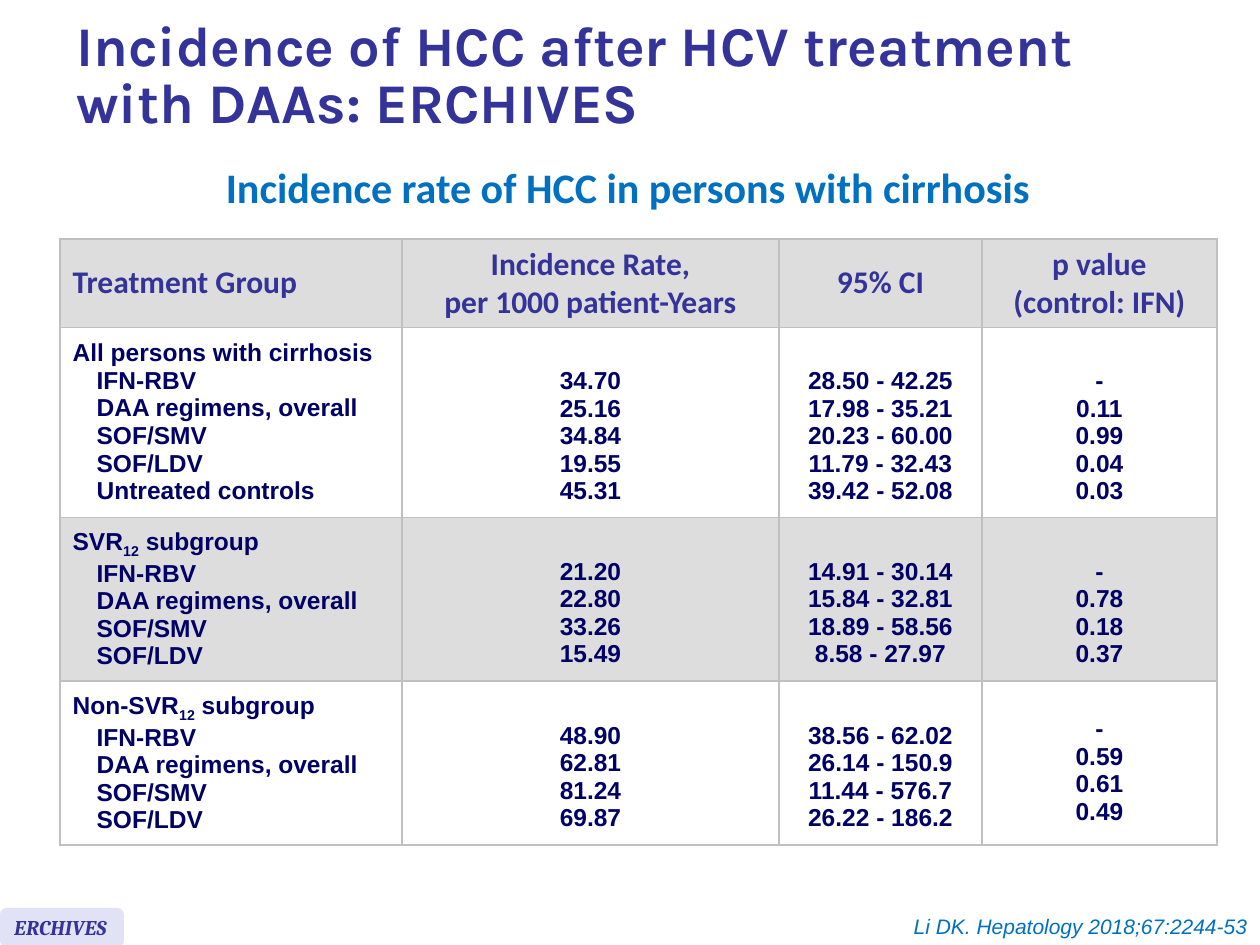
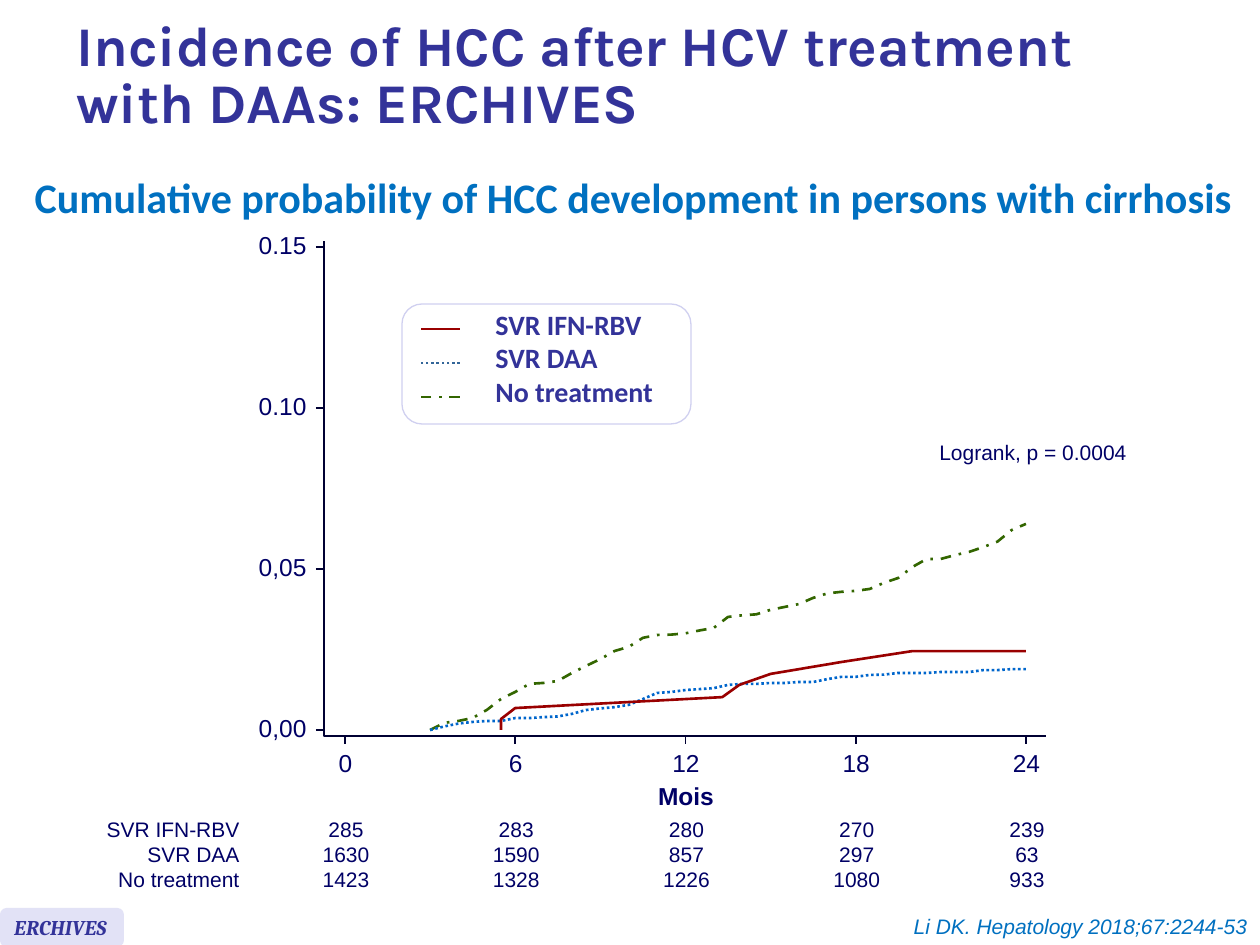
from collections import namedtuple

from lxml.etree import SubElement
from pptx import Presentation
from pptx.dml.color import RGBColor
from pptx.enum.dml import MSO_LINE_DASH_STYLE as Dash
from pptx.enum.shapes import MSO_CONNECTOR as Connector, MSO_SHAPE as Shape
from pptx.enum.text import MSO_ANCHOR as Anchor, PP_ALIGN as Align
from pptx.oxml.ns import qn
from pptx.util import Emu, Pt

SCALE = 914400 / 126
INDIGO, NAVY, BLUE, AXIS = "333399", "000066", "0070C0", "000033"
LAVENDER, LEGEND_EDGE = "E2E2F6", "D0D0F0"
WHITE, GREY, BORDER = "FFFFFF", "DDDDDD", "C0C0C0"
RED, DAA_BLUE, DAA_SAMPLE, GREEN = "990000", "0066CC", "336699", "336600"

TITLE = "Incidence of HCC after HCV treatment with DAAs: ERCHIVES"
CITATION = "Li DK. Hepatology 2018;67:2244-53"

Group = namedtuple("Group", "heading rows")
HEADERS = ["Treatment Group", "Incidence Rate,\nper 1000 patient-Years",
           "95% CI", "p value\n(control: IFN)"]
GROUPS = [
    Group("All persons with cirrhosis", [
        ("IFN-RBV", "34.70", "28.50 - 42.25", "-"),
        ("DAA regimens, overall", "25.16", "17.98 - 35.21", "0.11"),
        ("SOF/SMV", "34.84", "20.23 - 60.00", "0.99"),
        ("SOF/LDV", "19.55", "11.79 - 32.43", "0.04"),
        ("Untreated controls", "45.31", "39.42 - 52.08", "0.03")]),
    Group("SVR_12_ subgroup", [
        ("IFN-RBV", "21.20", "14.91 - 30.14", "-"),
        ("DAA regimens, overall", "22.80", "15.84 - 32.81", "0.78"),
        ("SOF/SMV", "33.26", "18.89 - 58.56", "0.18"),
        ("SOF/LDV", "15.49", "8.58 - 27.97", "0.37")]),
    Group("Non-SVR_12_ subgroup", [
        ("IFN-RBV", "48.90", "38.56 - 62.02", "-"),
        ("DAA regimens, overall", "62.81", "26.14 - 150.9", "0.59"),
        ("SOF/SMV", "81.24", "11.44 - 576.7", "0.61"),
        ("SOF/LDV", "69.87", "26.22 - 186.2", "0.49")]),
]
COLUMN_WIDTHS = [342, 377, 203, 235]
ROW_HEIGHTS = [88, 190, 164, 164]
CELL_MARGIN, HEADING_HEIGHT, REGIMEN_INDENT = 6, 28, 24

MONTHS = [0, 6, 12, 18, 24]
CASES_PER_1000 = {0: "0,00", 50: "0,05", 100: "0.10", 150: "0.15"}
ORIGIN_X, ORIGIN_Y = 25, 490
PX_PER_MONTH, PX_PER_CASE = 681 / 24, 161 / 50
AXIS_LEFT, AXIS_BOTTOM, AXIS_RIGHT, AXIS_TOP = 4, 496, 726, 1
TICK = 8
AT_RISK_TOP, LEGEND_PITCH = 570, 34


def half_monthly(cases, start=3):
    return [(start + index / 2, value) for index, value in enumerate(cases)]


Arm = namedtuple("Arm", "name stroke sample dash at_risk curve")
ARMS = [
    Arm("SVR IFN-RBV", RED, RED, None, [285, 283, 280, 270, 239],
        [(5.5, 0), (5.5, 3.4), (6, 6.8), (13.3, 10.2), (13.9, 14), (15, 17.4),
         (17.5, 21.1), (20, 24.5), (24, 24.5)]),
    Arm("SVR DAA", DAA_BLUE, DAA_SAMPLE, Dash.ROUND_DOT, [1630, 1590, 857, 297, 63],
        half_monthly([
            0, 1.1, 2, 2.5, 2.8, 2.8, 3.7, 3.7, 4, 4.2, 5, 6.2, 6.7, 7.1, 7.8,
            9.6, 11.5, 11.8, 12.4, 12.7, 13, 14, 14.3, 14.3, 14.6, 14.6, 14.9, 14.9,
            15.8, 16.5, 16.5, 17.1, 17.2, 17.7, 17.7, 17.7, 18, 18, 18, 18.6, 18.6,
            18.9, 18.9])),
    Arm("No treatment", GREEN, GREEN, Dash.DASH_DOT, [1423, 1328, 1226, 1080, 933],
        half_monthly([
            0, 2.2, 2.8, 3.7, 6.2, 9.6, 11.8, 14.3, 14.6, 15.2, 17.7, 19.9, 22,
            24.5, 25.8, 28.6, 29.5, 29.6, 30, 30.9, 31.7, 35.1, 35.6, 35.9, 37.3,
            38.2, 39.1, 41, 42.4, 42.9, 43.2, 43.8, 45.7, 47.2, 50.6, 53.1, 53.1,
            54.3, 55.3, 56.8, 58.5, 62.1, 64])),
]
ARM_NAMES = "\n".join(arm.name for arm in ARMS)


def px(*lengths):
    return [Emu(round(length * SCALE)) for length in lengths]


def color(value):
    return RGBColor.from_string(value)


def write(frame, text, size=14, font="Arial", fill=NAVY, bold=False, italic=False,
          align=Align.LEFT, spacing=None, indent=0):
    for index, line in enumerate(text.split("\n")):
        paragraph = frame.add_paragraph() if index else frame.paragraphs[0]
        paragraph.alignment = align
        if spacing:
            paragraph.line_spacing = spacing
        if indent and index:
            paragraph._p.get_or_add_pPr().set("marL", str(px(indent)[0]))
        for part, words in enumerate(line.split("_")):
            run = paragraph.add_run()
            run.text = words
            run.font.size, run.font.name = Pt(size), font
            run.font.bold, run.font.italic = bold, italic
            run.font.color.rgb = color(fill)
            is_subscript = part % 2 == 1
            if is_subscript:
                run._r.get_or_add_rPr().set("baseline", "-25000")


def add_text(slide, box, text, wrap=False, anchor=Anchor.TOP, **text_format):
    frame = slide.shapes.add_textbox(*px(*box)).text_frame
    frame.word_wrap = wrap
    frame.vertical_anchor = anchor
    write(frame, text, **text_format)


def style_line(line, stroke, width, dash=None):
    line.color.rgb = color(stroke)
    line.width = Pt(width)
    if dash:
        line.dash_style = dash


def add_round_box(slide, box, fill, edge=None):
    shape = slide.shapes.add_shape(Shape.ROUNDED_RECTANGLE, *px(*box))
    shape.shadow.inherit = False
    shape.fill.solid()
    shape.fill.fore_color.rgb = color(fill)
    if edge:
        style_line(shape.line, edge, 0.75)
    else:
        shape.line.fill.background()
    return shape


def add_line(slide, start, end, stroke, width=1, dash=None):
    connector = slide.shapes.add_connector(Connector.STRAIGHT, *px(*start, *end))
    style_line(connector.line, stroke, width, dash)
    SubElement(connector._element.spPr, qn("a:effectLst"))


def add_polyline(slide, points, stroke, width=1, dash=None):
    first, *others = [px(*point) for point in points]
    builder = slide.shapes.build_freeform(*first)
    builder.add_line_segments(others, close=False)
    shape = builder.convert_to_shape()
    shape.shadow.inherit = False
    shape.fill.background()
    style_line(shape.line, stroke, width, dash)


def add_frame(presentation):
    slide = presentation.slides.add_slide(presentation.slide_layouts[6])
    add_text(slide, (64, 10, 1142, 135), TITLE, wrap=True, anchor=Anchor.MIDDLE,
             size=32, font="Karla", fill=INDIGO, bold=True, spacing=0.85)
    add_text(slide, (898, 907, 362, 38), CITATION,
             size=12, fill=BLUE, italic=True, align=Align.RIGHT)
    badge = add_round_box(slide, (0, 908, 124, 39), LAVENDER)
    badge.text_frame.word_wrap = False
    write(badge.text_frame, "ERCHIVES", size=12, font="Cambria", fill=INDIGO,
          bold=True, italic=True)
    return slide


def add_subtitle(slide, box, text, **text_format):
    add_text(slide, box, text, size=24, font="Calibri", fill=BLUE, bold=True,
             align=Align.CENTER, **text_format)


def style_cell(cell, fill):
    properties = cell._tc.get_or_add_tcPr()
    for side in ("lnL", "lnR", "lnT", "lnB"):
        edge = SubElement(properties, qn(f"a:{side}"), w=str(Pt(1)))
        paint = SubElement(edge, qn("a:solidFill"))
        SubElement(paint, qn("a:srgbClr"), val=BORDER)
    cell.fill.solid()
    cell.fill.fore_color.rgb = color(fill)
    cell.vertical_anchor = Anchor.MIDDLE


def fill_header_row(cells):
    for index, (cell, header) in enumerate(zip(cells, HEADERS)):
        style_cell(cell, GREY)
        write(cell.text_frame, header, size=18, font="Calibri", fill=INDIGO, bold=True,
              align=Align.CENTER if index else Align.LEFT)


def fill_group_row(cells, group, fill):
    regimens, *measures = zip(*group.rows)
    label_cell, *value_cells = cells
    style_cell(label_cell, fill)
    write(label_cell.text_frame, "\n".join([group.heading, *regimens]), bold=True,
          indent=REGIMEN_INDENT)
    for cell, values in zip(value_cells, measures):
        style_cell(cell, fill)
        cell.margin_top = px(CELL_MARGIN + HEADING_HEIGHT)[0]
        write(cell.text_frame, "\n".join(values), bold=True, align=Align.CENTER)


def add_incidence_table(slide, left, top):
    box = px(left, top, sum(COLUMN_WIDTHS), sum(ROW_HEIGHTS))
    table = slide.shapes.add_table(len(ROW_HEIGHTS), len(COLUMN_WIDTHS), *box).table
    table.horz_banding = False
    for column, width in zip(table.columns, px(*COLUMN_WIDTHS)):
        column.width = width
    for row, height in zip(table.rows, px(*ROW_HEIGHTS)):
        row.height = height
    header_row, *group_rows = table.rows
    fill_header_row(header_row.cells)
    for index, (row, group) in enumerate(zip(group_rows, GROUPS)):
        fill_group_row(row.cells, group, GREY if index % 2 else WHITE)
    last_p_values = table.cell(len(GROUPS), len(HEADERS) - 1)
    last_p_values.vertical_anchor = Anchor.TOP


def plot_point(left, top, month, cases):
    return left + ORIGIN_X + month * PX_PER_MONTH, top + ORIGIN_Y - cases * PX_PER_CASE


def add_probability_axis(slide, left, top):
    axis_x = left + AXIS_LEFT
    for cases, label in CASES_PER_1000.items():
        _, y = plot_point(left, top, 0, cases)
        add_line(slide, (axis_x - TICK, y), (axis_x, y), AXIS)
        add_text(slide, (left - 74, y - 23, 73, 43), label, align=Align.RIGHT)


def add_month_axis(slide, left, top):
    axis_y = top + AXIS_BOTTOM
    for month, *counts in zip(MONTHS, *(arm.at_risk for arm in ARMS)):
        x, _ = plot_point(left, top, month, 0)
        add_line(slide, (x, axis_y + TICK), (x, axis_y), AXIS)
        add_text(slide, (x - 26, axis_y + 6, 53, 43), str(month), align=Align.CENTER)
        add_text(slide, (x - 35, top + AT_RISK_TOP, 72, 89), "\n".join(map(str, counts)),
                 size=12, align=Align.CENTER)
    add_text(slide, (left + 325, axis_y + 39, 82, 43), "Mois", bold=True,
             align=Align.CENTER)
    add_text(slide, (left - 228, top + AT_RISK_TOP, 160, 89), ARM_NAMES, size=12,
             align=Align.RIGHT)


def add_legend(slide, left, top):
    add_round_box(slide, (left, top, 289, 120), WHITE, LEGEND_EDGE)
    for index, arm in enumerate(ARMS):
        y = top + 25 + LEGEND_PITCH * index
        add_line(slide, (left + 58, y), (left + 19, y), arm.sample, 1.5, arm.dash)
    add_text(slide, (left + 81, top - 3, 184, 115), ARM_NAMES, size=16, font="Calibri",
             fill=INDIGO, bold=True)


def add_survival_plot(slide, left, top):
    axis_ends = [(AXIS_RIGHT, AXIS_BOTTOM), (AXIS_LEFT, AXIS_BOTTOM), (AXIS_LEFT, AXIS_TOP)]
    add_polyline(slide, [(left + x, top + y) for x, y in axis_ends], AXIS)
    add_probability_axis(slide, left, top)
    add_month_axis(slide, left, top)
    add_legend(slide, left + 82, top + 64)
    for arm in reversed(ARMS):
        points = [plot_point(left, top, month, cases) for month, cases in arm.curve]
        add_polyline(slide, points, arm.stroke, 1.5, arm.dash)
    add_text(slide, (left + 607, top + 193, 214, 38), "Logrank, p = 0.0004", size=12)


def main():
    presentation = Presentation()
    presentation.slide_width, presentation.slide_height = px(1260, 945)

    table_slide = add_frame(presentation)
    add_subtitle(table_slide, (208, 179, 840, 44),
                 "Incidence rate of HCC in persons with cirrhosis", spacing=Pt(15.2))
    add_incidence_table(table_slide, 60, 239)

    plot_slide = add_frame(presentation)
    add_subtitle(plot_slide, (15, 165, 1237, 63),
                 "Cumulative probability of HCC development in persons with cirrhosis")
    add_survival_plot(plot_slide, 320, 240)

    presentation.save("out.pptx")


if __name__ == "__main__":
    main()
